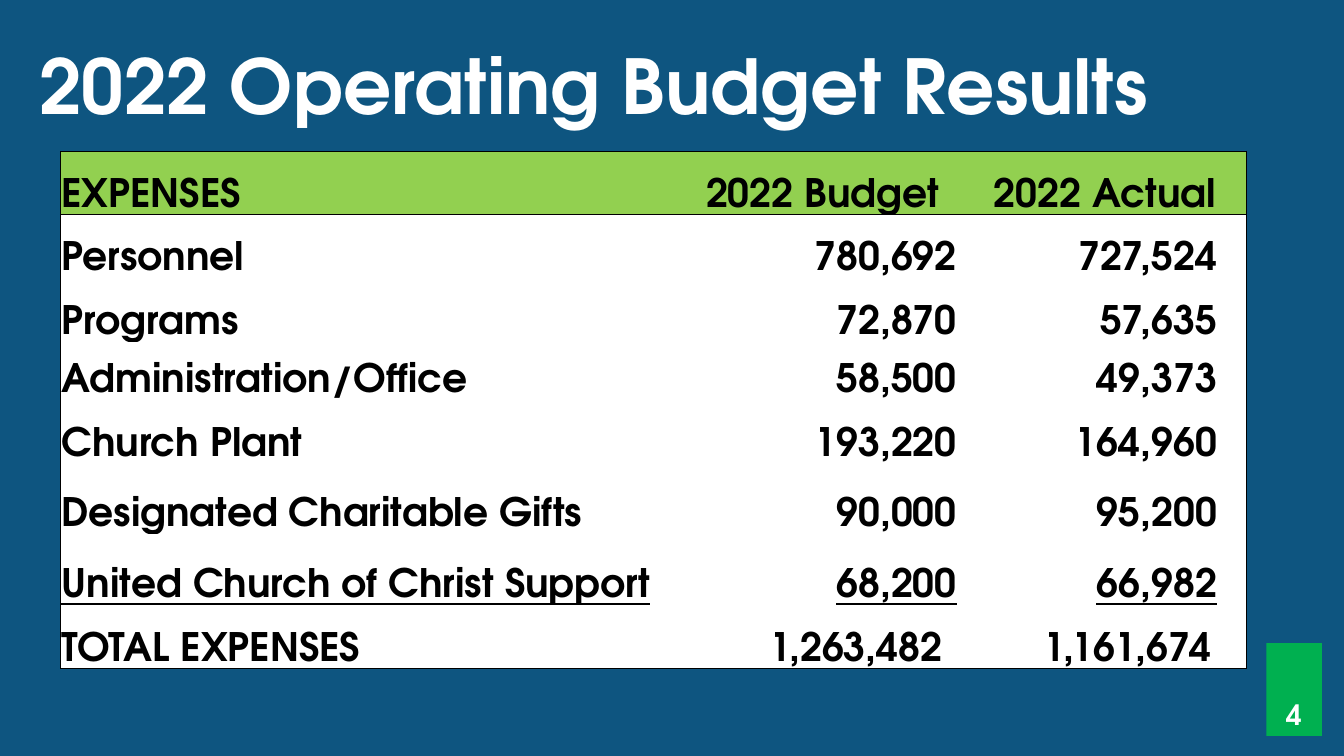
from pptx import Presentation
from pptx.dml.color import RGBColor
from pptx.enum.shapes import MSO_SHAPE
from pptx.enum.text import MSO_ANCHOR, PP_ALIGN
from pptx.oxml.ns import qn
from pptx.util import Inches, Pt
from lxml.etree import SubElement

FONT = "TeX Gyre Adventor"
NAVY = RGBColor(0x0E, 0x55, 0x80)
LIME = RGBColor(0x92, 0xD0, 0x50)
GREEN = RGBColor(0x00, 0xB0, 0x50)
WHITE = RGBColor(0xFF, 0xFF, 0xFF)
BLACK = RGBColor(0x00, 0x00, 0x00)

EXPENSES = [
    ("EXPENSES", "2022 Budget", "2022 Actual"),
    ("Personnel", "780,692", "727,524"),
    ("Programs", "72,870", "57,635"),
    ("Administration/Office", "58,500", "49,373"),
    ("Church Plant", "193,220", "164,960"),
    ("Designated Charitable Gifts", "90,000", "95,200"),
    ("United Church of Christ Support", "68,200", "66,982"),
    ("TOTAL EXPENSES", "1,263,482", "1,161,674"),
]
COLUMN_WIDTHS = [6.16, 2.8, 2.8]
ROW_HEIGHTS = [0.63, 0.63, 0.63, 0.58, 0.63, 0.7, 0.7, 0.63]
FIGURE_STOPS = {1: 2.72, 2: 2.5}
TOTAL_STOPS = {1: 2.58, 2: 2.45}
TOTAL_ROW = len(EXPENSES) - 1
SUBTOTAL_ROW = TOTAL_ROW - 1


def add_text(paragraph, text, size, color):
    run = paragraph.add_run()
    run.text = text
    run.font.name = FONT
    run.font.size = Pt(size)
    run.font.bold = True
    run.font.color.rgb = color
    return run


def set_borders(cell, drawn_sides):
    properties = cell._tc.get_or_add_tcPr()
    for side in "LRTB":
        border = SubElement(properties, qn(f"a:ln{side}"), w=str(Pt(0.5)))
        if side in drawn_sides:
            fill = SubElement(border, qn("a:solidFill"))
            SubElement(fill, qn("a:srgbClr"), val=str(BLACK))
        else:
            SubElement(border, qn("a:noFill"))


prs = Presentation()
prs.slide_width = Inches(13.33)
prs.slide_height = Inches(7.5)
slide = prs.slides.add_slide(prs.slide_layouts[5])
slide.background.fill.solid()
slide.background.fill.fore_color.rgb = NAVY

# Title
title = slide.shapes.title
title.left, title.top = Inches(0.29), Inches(0.34)
title.width, title.height = Inches(11.88), Inches(1.31)
title.text_frame.word_wrap = True
title.text_frame.vertical_anchor = MSO_ANCHOR.TOP
heading = title.text_frame.paragraphs[0]
heading.alignment = PP_ALIGN.LEFT
add_text(heading, "2022 Operating Budget Results", 54, WHITE)

# Page number block
page_block = slide.shapes.add_shape(
    MSO_SHAPE.RECTANGLE, Inches(12.56), Inches(6.38), Inches(0.55), Inches(0.92))
page_block.shadow.inherit = False
page_block.fill.solid()
page_block.fill.fore_color.rgb = GREEN
page_block.line.fill.background()
page_block.text_frame.vertical_anchor = MSO_ANCHOR.BOTTOM
page_number = page_block.text_frame.paragraphs[0]
page_number.alignment = PP_ALIGN.CENTER
add_text(page_number, "4", 20, WHITE)

# Expense table
budget = slide.shapes.add_table(
    len(EXPENSES), len(COLUMN_WIDTHS), Inches(0.6), Inches(1.5),
    Inches(sum(COLUMN_WIDTHS)), Inches(sum(ROW_HEIGHTS))).table
budget.first_row = False
budget.horz_banding = False
for column, width in zip(budget.columns, COLUMN_WIDTHS):
    column.width = Inches(width)
for row, height in zip(budget.rows, ROW_HEIGHTS):
    row.height = Inches(height)

for r, entries in enumerate(EXPENSES):
    for c, entry in enumerate(entries):
        cell = budget.cell(r, c)
        cell.margin_left = cell.margin_right = cell.margin_top = Inches(0.01)
        cell.margin_bottom = 0
        cell.vertical_anchor = MSO_ANCHOR.BOTTOM

        # Outer frame and the rule below the header
        sides = {0: "L", 1: "", 2: "R"}[c]
        sides += {0: "TB", 1: "T", TOTAL_ROW: "B"}.get(r, "")
        set_borders(cell, sides)
        cell.fill.solid()
        cell.fill.fore_color.rgb = LIME if r == 0 else WHITE

        paragraph = cell.text_frame.paragraphs[0]
        if c > 0 and r == 0:
            paragraph.alignment = PP_ALIGN.CENTER
        elif c > 0:
            # Figures hang from a right tab, so the subtotal rule spans the column
            stops = TOTAL_STOPS if r == TOTAL_ROW else FIGURE_STOPS
            tabs = SubElement(paragraph._p.get_or_add_pPr(), qn("a:tabLst"))
            SubElement(tabs, qn("a:tab"), pos=str(Inches(stops[c])), algn="r")
            entry = "\t" + entry
        run = add_text(paragraph, entry, 28, BLACK)
        if r == SUBTOTAL_ROW:
            run.font.underline = True

prs.save("out.pptx")
